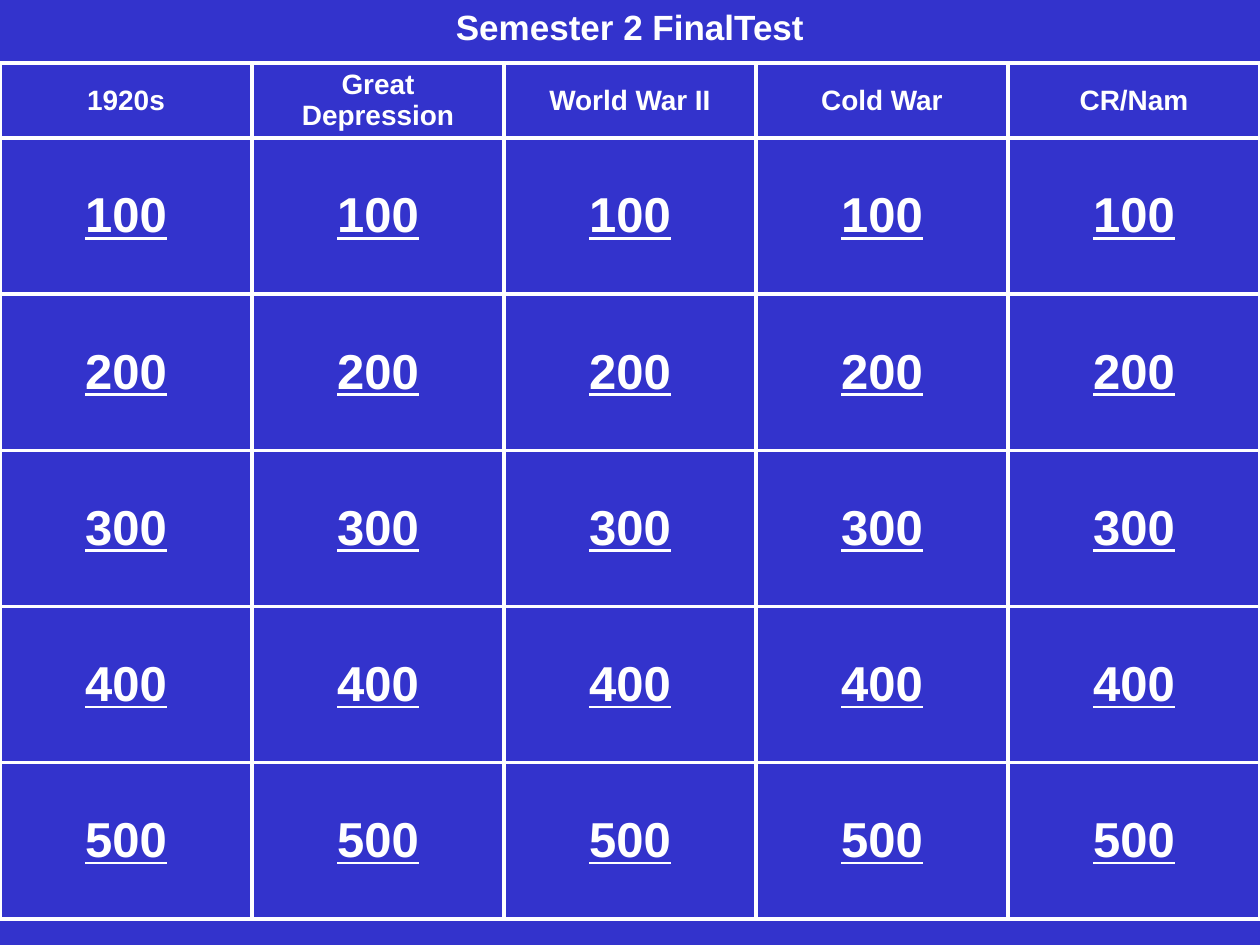
from lxml.etree import SubElement
from pptx import Presentation
from pptx.dml.color import RGBColor
from pptx.enum.text import MSO_ANCHOR, PP_ALIGN
from pptx.oxml.ns import qn
from pptx.util import Inches, Pt

HUES = {"board": "3333CC", "ink": "FFFFFF"}
TOPICS = ["1920s", "Great Depression", "World War II", "Cold War", "CR/Nam"]
POINTS = [100, 200, 300, 400, 500]


def write(frame, text, **form):
    frame.text = text
    para = frame.paragraphs[0]
    para.alignment = PP_ALIGN.CENTER
    font = para.runs[0].font
    for key, value in {"name": "Arial", "bold": True, **form}.items():
        setattr(font, key, value)
    font.color.rgb = RGBColor.from_string(HUES["ink"])


def edge(cell):
    props = cell._tc.get_or_add_tcPr()
    for side in "LRTB":
        line = SubElement(props, qn(f"a:ln{side}"), w=str(Pt(2.25)))
        fill = SubElement(line, qn("a:solidFill"))
        SubElement(fill, qn("a:srgbClr"), val=HUES["ink"])


deck = Presentation()
deck.slide_width, deck.slide_height = Inches(10), Inches(7.5)
wide = deck.slide_width
slide = deck.slides.add_slide(deck.slide_layouts[5])
back = slide.background.fill
back.solid()
back.fore_color.rgb = RGBColor.from_string(HUES["board"])

# Title
title = slide.shapes.title
title.left, title.top = int(wide * 0.075), 0
title.width, title.height = int(wide * 0.85), Inches(0.42)
title.text_frame.vertical_anchor = MSO_ANCHOR.MIDDLE
write(title.text_frame, "Semester 2 FinalTest", size=Pt(20))

# Game board: a row of topics, then a row for each point value
rows = [TOPICS] + [[str(value)] * len(TOPICS) for value in POINTS]
grid = slide.shapes.add_table(
    len(rows), len(TOPICS), 0, Inches(0.5), wide, Inches(6.85)).table
grid.horz_banding = False
for r, row in enumerate(rows):
    head = r == 0
    grid.rows[r].height = Inches(0.53 if head else 1.24)
    form = {"size": Pt(16 if head else 28), "underline": not head}
    for c, text in enumerate(row):
        cell = grid.cell(r, c)
        cell.vertical_anchor = MSO_ANCHOR.MIDDLE
        edge(cell)
        cell.fill.solid()
        cell.fill.fore_color.rgb = RGBColor.from_string(HUES["board"])
        write(cell.text_frame, text, **form)

deck.save("out.pptx")
